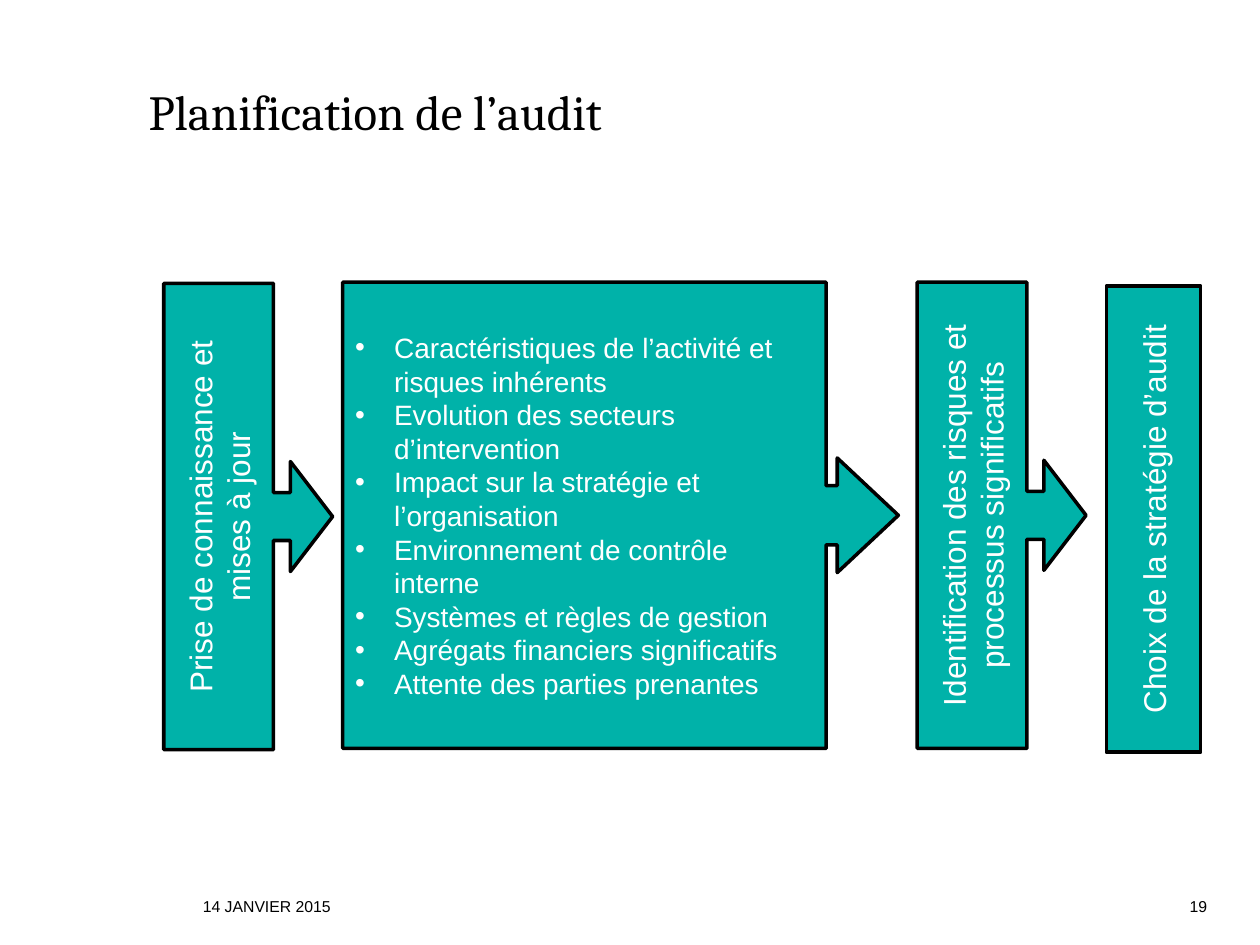
from dataclasses import dataclass

from lxml.etree import SubElement
from pptx import Presentation
from pptx.dml.color import RGBColor
from pptx.enum.shapes import MSO_SHAPE
from pptx.enum.text import MSO_ANCHOR, PP_ALIGN
from pptx.oxml.ns import qn
from pptx.util import Inches, Pt


@dataclass(frozen=True)
class Theme:
    teal: RGBColor = RGBColor(0x00, 0xB2, 0xA9)
    black: RGBColor = RGBColor(0x00, 0x00, 0x00)
    white: RGBColor = RGBColor(0xFF, 0xFF, 0xFF)
    heading_font: str = "Cambria"
    body_font: str = "Arial"
    title_size: int = 28
    step_size: int = 18
    bullet_size: int = 16
    footer_size: int = 9
    outline: int = 2


THEME = Theme()
STEP_HEIGHT = 3.7
BULLET_INDENT = 0.31
NARROW_ARROW = (0.284, 0.326, 0.25, 0.65)
WIDE_ARROW = (0.127, 0.123, 0.131, 0.87)

LABELS = [
    ("Planification de l’audit", (1.18, 0, 8.25, 1.11),
     THEME.heading_font, THEME.title_size, PP_ALIGN.LEFT),
    ("14 JANVIER 2015", (1.61, 7.07, 7.09, 0.2),
     THEME.body_font, THEME.footer_size, PP_ALIGN.LEFT),
    ("19", (8.78, 7.07, 0.8, 0.2),
     THEME.body_font, THEME.footer_size, PP_ALIGN.RIGHT),
]

CHARACTERISTICS = [
    "Caractéristiques de l’activité et risques inhérents",
    "Evolution des secteurs d’intervention",
    "Impact sur la stratégie et l’organisation",
    "Environnement de contrôle interne",
    "Systèmes et règles de gestion",
    "Agrégats financiers significatifs",
    "Attente des parties prenantes",
]

STEPS = [
    (["Prise de connaissance et\nmises à jour"], 1.3, 2.25, 1.34, NARROW_ARROW),
    (CHARACTERISTICS, 2.72, 2.24, 4.41, WIDE_ARROW),
    (["Identification des risques et processus significatifs"], 7.28, 2.24, 1.34, NARROW_ARROW),
    (["Choix de la stratégie d’audit"], 8.78, 2.27, 0.75, ()),
]


def style_paragraph(paragraph, font_name, size, color, alignment):
    paragraph.alignment = alignment
    paragraph.font.name = font_name
    paragraph.font.size = Pt(size)
    paragraph.font.color.rgb = color


def add_label(slide, text, box, font_name, size, alignment):
    frame = slide.shapes.add_textbox(*map(Inches, box)).text_frame
    frame.word_wrap = True
    frame.vertical_anchor = MSO_ANCHOR.BOTTOM
    frame.margin_left = frame.margin_right = frame.margin_top = frame.margin_bottom = 0
    paragraph = frame.paragraphs[0]
    paragraph.text = text
    style_paragraph(paragraph, font_name, size, THEME.black, alignment)


def add_bullet(paragraph):
    properties = paragraph._p.get_or_add_pPr()
    properties.set("marL", str(Inches(BULLET_INDENT)))
    properties.set("indent", str(-Inches(BULLET_INDENT)))
    SubElement(properties, qn("a:buFont")).set("typeface", THEME.body_font)
    SubElement(properties, qn("a:buChar")).set("char", "•")


def add_step(slide, lines, left, top, width, adjustments):
    kind = MSO_SHAPE.RIGHT_ARROW_CALLOUT if adjustments else MSO_SHAPE.RECTANGLE
    shape = slide.shapes.add_shape(kind, *map(Inches, (left, top, width, STEP_HEIGHT)))
    for index, value in enumerate(adjustments):
        shape.adjustments[index] = value
    shape.shadow.inherit = False
    shape.fill.solid()
    shape.fill.fore_color.rgb = THEME.teal
    shape.line.color.rgb = THEME.black
    shape.line.width = Pt(THEME.outline)

    bulleted = len(lines) > 1
    frame = shape.text_frame
    frame.word_wrap = True
    frame.vertical_anchor = MSO_ANCHOR.MIDDLE
    if not bulleted:
        frame._txBody.bodyPr.set("vert", "vert270")
    for index, line in enumerate(lines):
        paragraph = frame.add_paragraph() if index else frame.paragraphs[0]
        paragraph.text = line
        if bulleted:
            add_bullet(paragraph)
        style_paragraph(
            paragraph,
            THEME.body_font,
            THEME.bullet_size if bulleted else THEME.step_size,
            THEME.white,
            PP_ALIGN.LEFT if bulleted else PP_ALIGN.CENTER,
        )


def main():
    presentation = Presentation()
    presentation.slide_width = Inches(10)
    presentation.slide_height = Inches(7.5)
    slide = presentation.slides.add_slide(presentation.slide_layouts[6])
    for label in LABELS:
        add_label(slide, *label)
    for step in STEPS:
        add_step(slide, *step)
    presentation.save("out.pptx")


if __name__ == "__main__":
    main()
